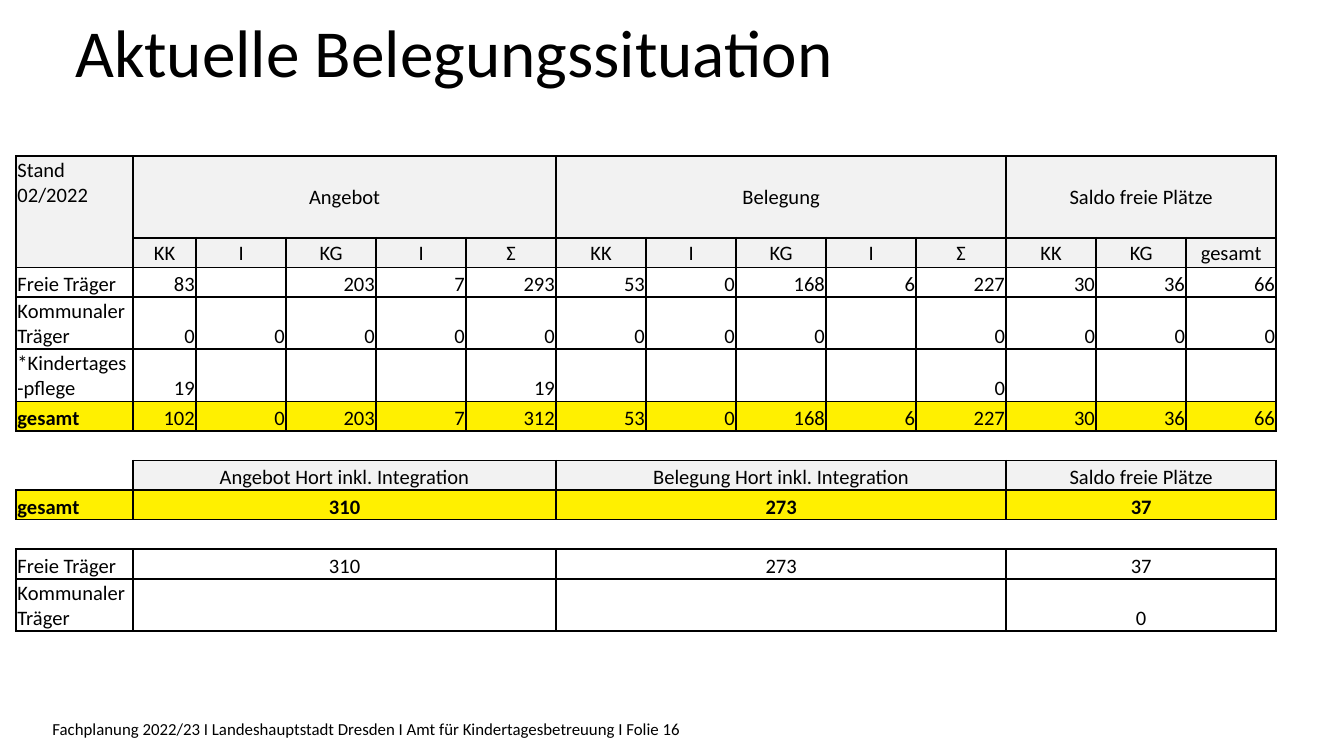
"""Build the slide showing the current occupancy of childcare places."""
import lxml.etree
import pptx
import pptx.dml.color
import pptx.enum.text
import pptx.oxml.ns
import pptx.util

Inches = pptx.util.Inches
Pt = pptx.util.Pt
ALIGN = pptx.enum.text.PP_ALIGN
ANCHOR = pptx.enum.text.MSO_ANCHOR

THEME = {
    "font": "Calibri",
    "ink": "000000",
    "header": "F2F2F2",
    "total": "FFF000",
    "title_size": 36,
    "table_size": 11,
    "footer_size": 9,
    "border": 1,
}
NO_GRID_STYLE = "{2D5ABB26-0587-4C30-8999-92F81FD0307C}"

TITLE = "Aktuelle Belegungssituation"
FOOTER = "Fachplanung 2022/23 I Landeshauptstadt Dresden I Amt für Kindertagesbetreuung I Folie 16"

COLUMN_WIDTHS = [0.87, 0.47] + [0.67] * 12
LOW, HIGH = 0.22, 0.39
GROUP_STARTS = [0, 1, 6, 11, 14]

ROWS = [
    ("group", HIGH, ["Stand 02/2022", "Angebot", "Belegung", "Saldo freie Plätze"]),
    ("blank", LOW, []),
    ("heading", LOW, ["", "KK", "I", "KG", "I", "Ʃ", "KK", "I", "KG", "I", "Ʃ", "KK", "KG", "gesamt"]),
    ("data", LOW, ["Freie Träger", 83, "", 203, 7, 293, 53, 0, 168, 6, 227, 30, 36, 66]),
    ("data", HIGH, ["Kommunaler Träger", 0, 0, 0, 0, 0, 0, 0, 0, "", 0, 0, 0, 0]),
    ("data", HIGH, ["*Kindertages-pflege", 19, "", "", "", 19, "", "", "", "", 0, "", "", ""]),
    ("total", LOW, ["gesamt", 102, 0, 203, 7, 312, 53, 0, 168, 6, 227, 30, 36, 66]),
    ("blank", LOW, []),
    ("hort heading", LOW, ["", "Angebot Hort inkl. Integration", "Belegung Hort inkl. Integration",
                           "Saldo freie Plätze"]),
    ("hort total", LOW, ["gesamt", 310, 273, 37]),
    ("blank", LOW, []),
    ("hort data", LOW, ["Freie Träger", 310, 273, 37]),
    ("hort data", HIGH, ["Kommunaler Träger", "", "", 0]),
]
HEADER_ROWS = range(3)
FIRST_GAP, HORT_HEADING, SECOND_GAP = 7, 8, 10


def add_text(paragraph, text, size, bold=False):
    run = paragraph.add_run()
    run.text = text
    run.font.name = THEME["font"]
    run.font.size = Pt(size)
    run.font.bold = bold
    run.font.color.rgb = pptx.dml.color.RGBColor.from_string(THEME["ink"])


def set_insets(text_frame, left, top, right, bottom):
    text_frame.margin_left, text_frame.margin_top = Inches(left), Inches(top)
    text_frame.margin_right, text_frame.margin_bottom = Inches(right), Inches(bottom)


def border_sides(row, column):
    """Return the sides of a cell that carry a line."""
    if row == SECOND_GAP:
        return "TB"
    if row == FIRST_GAP:
        return "TB" if column else "T"
    if column == 0 and row == HORT_HEADING:
        return "RB"
    if column == 0 and row in HEADER_ROWS:
        return "LR" + {0: "T", 2: "B"}.get(row, "")
    return "LRTB"


def draw_borders(cell, sides):
    properties = cell._tc.get_or_add_tcPr()
    qn = pptx.oxml.ns.qn
    for index, side in enumerate("LRTB"):
        line = lxml.etree.Element(qn("a:ln" + side), w=str(Pt(THEME["border"])))
        if side in sides:
            fill = lxml.etree.SubElement(line, qn("a:solidFill"))
            lxml.etree.SubElement(fill, qn("a:srgbClr"), val=THEME["ink"])
        else:
            lxml.etree.SubElement(line, qn("a:noFill"))
        properties.insert(index, line)


def format_cell(cell, kind, row, column):
    set_insets(cell, 0.01, 0.01, 0.01, 0)
    centred = kind in ("group", "heading") and column > 0
    cell.vertical_anchor = ANCHOR.MIDDLE if centred else ANCHOR.BOTTOM
    if row in HEADER_ROWS or (kind == "hort heading" and column > 0):
        color = THEME["header"]
    else:
        color = THEME["total"] if "total" in kind else None
    if color:
        cell.fill.solid()
        cell.fill.fore_color.rgb = pptx.dml.color.RGBColor.from_string(color)
    else:
        cell.fill.background()
    draw_borders(cell, border_sides(row, column))
    end = lxml.etree.SubElement(cell.text_frame.paragraphs[0]._p, pptx.oxml.ns.qn("a:endParaRPr"))
    end.set("sz", str(THEME["table_size"] * 100))


def fill_row(table, row, kind, values):
    grouped = len(values) == len(GROUP_STARTS) - 1
    for index, value in enumerate(values):
        column = GROUP_STARTS[index] if grouped else index
        cell = table.cell(row, column)
        if grouped and index:
            last_row = row + 1 if kind == "group" else row
            cell.merge(table.cell(last_row, GROUP_STARTS[index + 1] - 1))
        if value == "":
            continue
        paragraph = cell.text_frame.paragraphs[0]
        if column:
            paragraph.alignment = ALIGN.RIGHT if kind in ("data", "total") else ALIGN.CENTER
        bold = kind == "hort total" or (kind == "total" and column == 0)
        add_text(paragraph, str(value), THEME["table_size"], bold)


def add_occupancy_table(slide):
    heights = [height for _, height, _ in ROWS]
    frame = slide.shapes.add_table(len(ROWS), len(COLUMN_WIDTHS), Inches(0.12), Inches(1.16),
                                   Inches(sum(COLUMN_WIDTHS)), Inches(sum(heights)))
    table = frame.table
    table.first_row = table.horz_banding = False
    table._tbl.tblPr.find(pptx.oxml.ns.qn("a:tableStyleId")).text = NO_GRID_STYLE
    for column, width in zip(table.columns, COLUMN_WIDTHS):
        column.width = Inches(width)
    for row, (kind, height, values) in enumerate(ROWS):
        table.rows[row].height = Inches(height)
        for column in range(len(COLUMN_WIDTHS)):
            format_cell(table.cell(row, column), kind, row, column)
        fill_row(table, row, kind, values)
    table.cell(SECOND_GAP, 0).merge(table.cell(SECOND_GAP, len(COLUMN_WIDTHS) - 1))


def add_title(slide):
    title = slide.shapes.title
    title.left, title.top, title.width, title.height = map(Inches, (0.44, 0.04, 8.98, 0.86))
    set_insets(title.text_frame, 0.12, 0.04, 0.63, 0.05)
    title.text_frame.vertical_anchor = ANCHOR.TOP
    title.text_frame.auto_size = pptx.enum.text.MSO_AUTO_SIZE.NONE
    paragraph = title.text_frame.paragraphs[0]
    paragraph.alignment = ALIGN.LEFT
    add_text(paragraph, TITLE, THEME["title_size"])


def add_footer(slide):
    footer = slide.shapes.add_textbox(*map(Inches, (0, 5.35, 10, 0.24)))
    footer.text_frame.word_wrap = True
    set_insets(footer.text_frame, 0.39, 0, 0.39, 0.08)
    footer.text_frame.vertical_anchor = ANCHOR.TOP
    add_text(footer.text_frame.paragraphs[0], FOOTER, THEME["footer_size"])


def main():
    presentation = pptx.Presentation()
    presentation.slide_width = Inches(10)
    presentation.slide_height = Inches(10) * 9 // 16
    slide = presentation.slides.add_slide(presentation.slide_layouts.get_by_name("Title Only"))
    add_footer(slide)
    add_title(slide)
    add_occupancy_table(slide)
    presentation.save("out.pptx")


if __name__ == "__main__":
    main()
